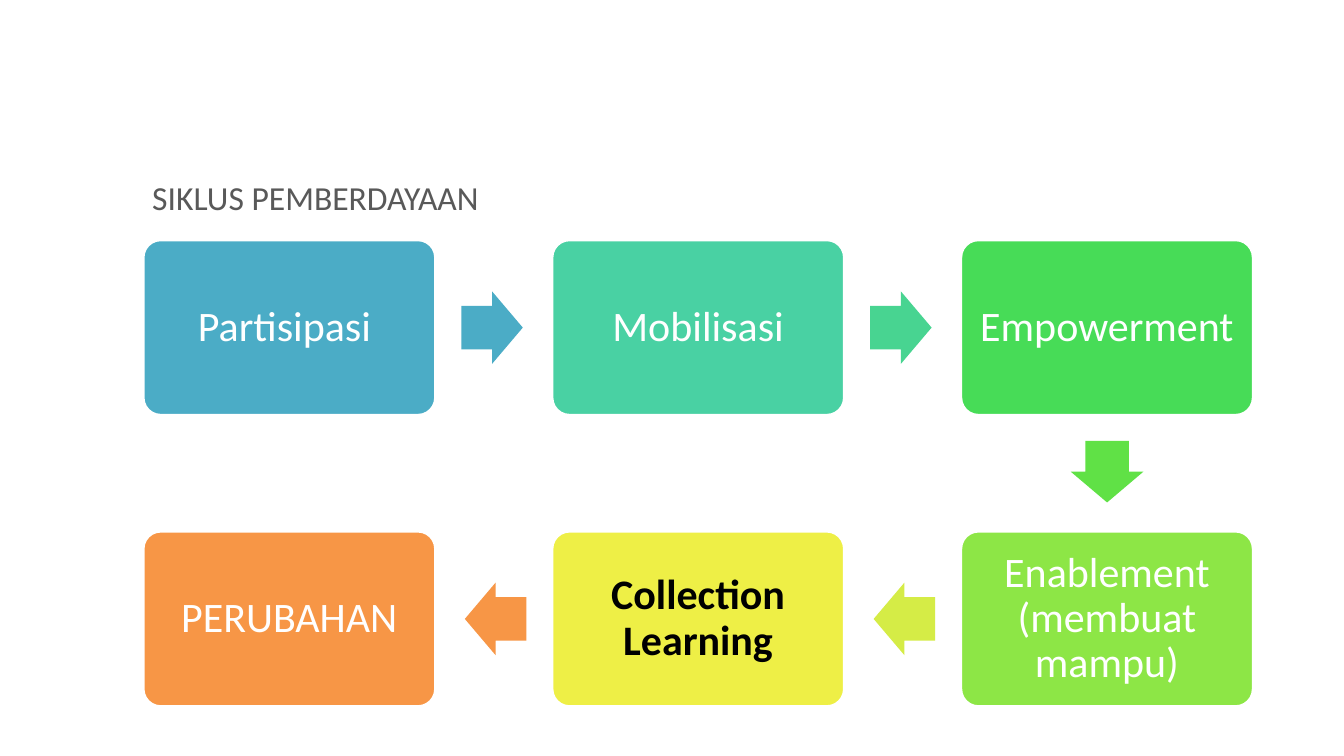
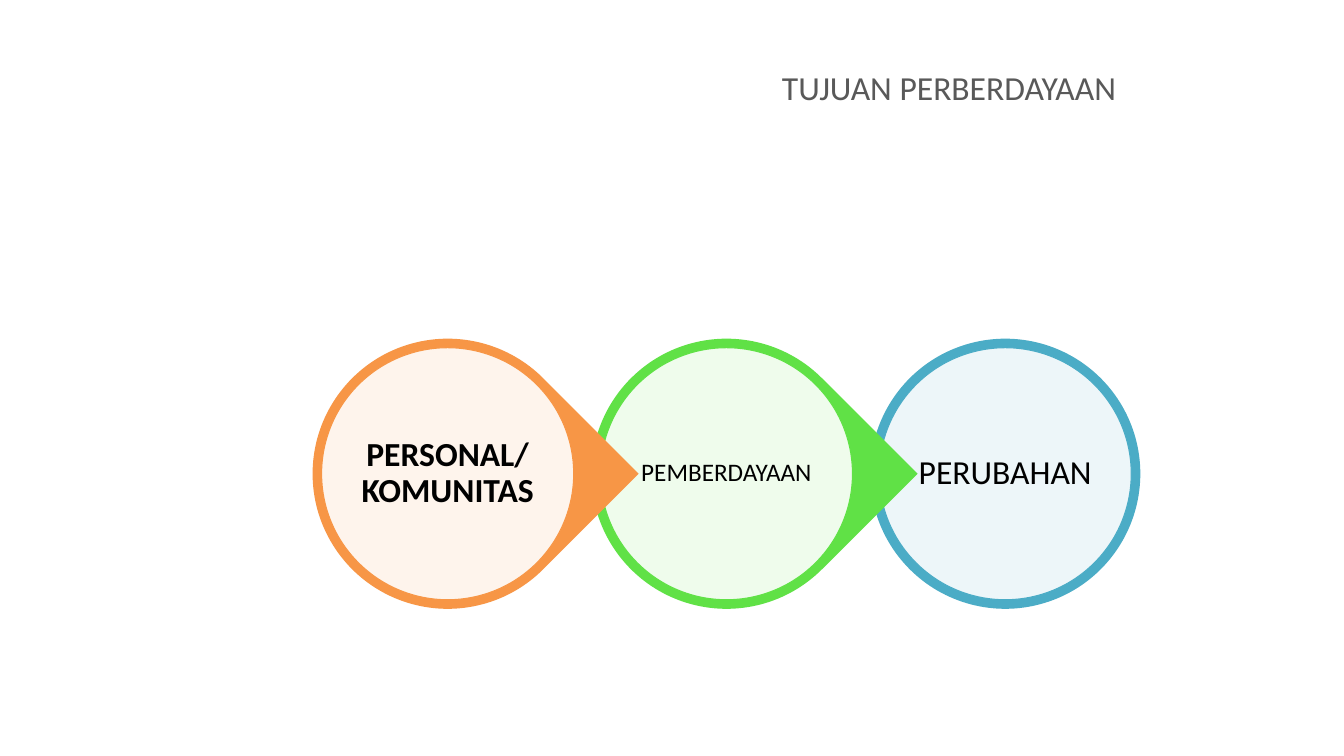
from dataclasses import dataclass
from itertools import zip_longest

from lxml.etree import SubElement
from pptx import Presentation
from pptx.dml.color import RGBColor
from pptx.enum.shapes import MSO_SHAPE
from pptx.enum.text import MSO_ANCHOR, MSO_AUTO_SIZE, PP_ALIGN
from pptx.oxml.ns import qn
from pptx.util import Inches, Pt


@dataclass(frozen=True)
class Theme:
    """Colours, font and type sizes shared by the slides."""
    font: str = "Calibri"
    title: str = "595959"
    white: str = "FFFFFF"
    black: str = "000000"
    blue: str = "4BACC6"
    teal: str = "49D1A3"
    mint: str = "48D491"
    green: str = "47DC57"
    leaf: str = "60E146"
    lime: str = "8DE646"
    citron: str = "D5EC46"
    yellow: str = "EEEF46"
    orange: str = "F79646"
    title_size: int = 24
    step_size: int = 30
    goal_size: int = 24
    small_goal_size: int = 18


@dataclass(frozen=True)
class Box:
    """A rectangle in inches."""
    left: float
    top: float
    width: float
    height: float

    def lengths(self):
        """Return the rectangle as slide lengths."""
        return [Inches(v) for v in (self.left, self.top, self.width, self.height)]

    def inset(self, margin):
        """Return the rectangle shrunk on every side."""
        return Box(self.left + margin, self.top + margin,
                   self.width - 2 * margin, self.height - 2 * margin)


THEME = Theme()

CYCLE_STEPS = [
    ("Partisipasi ", 0, 0, THEME.blue, THEME.white, False),
    ("Mobilisasi", 1, 0, THEME.teal, THEME.white, False),
    ("Empowerment", 2, 0, THEME.green, THEME.white, False),
    ("Enablement (membuat mampu)", 2, 1, THEME.lime, THEME.white, False),
    ("Collection Learning", 1, 1, THEME.yellow, THEME.black, True),
    ("PERUBAHAN", 0, 1, THEME.orange, THEME.white, False),
]
CYCLE_ARROWS = [THEME.blue, THEME.mint, THEME.leaf, THEME.citron, THEME.orange]
ROTATIONS = {(1, 0): 0, (0, 1): 90, (-1, 0): 180}

GOALS = [
    ("PERSONAL/KOMUNITAS", THEME.orange, THEME.goal_size, True),
    ("PEMBERDAYAAN", THEME.leaf, THEME.small_goal_size, False),
    ("PERUBAHAN", THEME.blue, THEME.goal_size, False),
]


def format_text(paragraph, size, colour, align, bold=False):
    """Apply font and alignment to a paragraph."""
    paragraph.alignment = align
    font = paragraph.font
    font.name, font.size, font.bold = THEME.font, Pt(size), bold
    font.color.rgb = RGBColor.from_string(colour)


def add_titled_slide(deck, text, box, align):
    """Add a slide with its title placed in the box."""
    slide = deck.slides.add_slide(deck.slide_layouts[5])
    title = slide.shapes.title
    title.left, title.top, title.width, title.height = box.lengths()
    frame = title.text_frame
    frame.text = text
    frame.auto_size = MSO_AUTO_SIZE.NONE
    frame.vertical_anchor = MSO_ANCHOR.TOP
    format_text(frame.paragraphs[0], THEME.title_size, THEME.title, align)
    return slide


def add_filled(slide, kind, box, fill, line=None, line_width=0.75):
    """Add a flat shape with an optional outline."""
    shape = slide.shapes.add_shape(kind, *box.lengths())
    shape.shadow.inherit = False
    shape.fill.solid()
    shape.fill.fore_color.rgb = RGBColor.from_string(fill)
    if line:
        shape.line.color.rgb = RGBColor.from_string(line)
        shape.line.width = Pt(line_width)
    else:
        shape.line.fill.background()
    return shape


def set_label(shape, text, margin, size, colour, bold):
    """Write a centred label inside a shape."""
    frame = shape.text_frame
    frame.text = text
    frame.word_wrap = True
    frame.vertical_anchor = MSO_ANCHOR.MIDDLE
    frame.margin_left = frame.margin_right = Inches(margin)
    frame.margin_top = frame.margin_bottom = Inches(margin)
    frame.paragraphs[0].line_spacing = 0.9
    format_text(frame.paragraphs[0], size, colour, PP_ALIGN.CENTER, bold)


def add_cycle(slide, box):
    """Draw the steps on a three by two grid, with arrows between them."""
    width, height = 2.9, 1.74
    arrow_width, arrow_height, reach = 0.61, 0.72, 0.56
    column_pitch = (box.width - width) / 2
    row_pitch = box.height - height
    for step, following, arrow_fill in zip_longest(
            CYCLE_STEPS, CYCLE_STEPS[1:], CYCLE_ARROWS):
        text, column, row, fill, colour, bold = step
        left = box.left + column * column_pitch
        top = box.top + row * row_pitch
        card = add_filled(slide, MSO_SHAPE.ROUNDED_RECTANGLE,
                          Box(left, top, width, height), fill, THEME.white, 2)
        card.adjustments[0] = 0.1
        set_label(card, text, 0.12, THEME.step_size, colour, bold)
        if following:
            across, down = following[1] - column, following[2] - row
            centre_x = left + width / 2 + across * (width / 2 + reach)
            centre_y = top + height / 2 + down * (height / 2 + reach)
            arrow = add_filled(
                slide, MSO_SHAPE.RIGHT_ARROW,
                Box(centre_x - arrow_width / 2, centre_y - arrow_height / 2,
                    arrow_width, arrow_height), arrow_fill)
            arrow.adjustments[0] = 0.6
            arrow.rotation = ROTATIONS[across, down]


def add_goals(slide, box):
    """Draw the chain of goals from right to left, each pointing at the next."""
    last = len(GOALS) - 1
    pitch = (box.width - box.height) / last
    for index in range(last, -1, -1):
        text, colour, size, bold = GOALS[index]
        rim = Box(box.left + index * pitch, box.top, box.height, box.height)
        if index == last:
            add_filled(slide, MSO_SHAPE.OVAL, rim, colour)
        else:
            add_filled(slide, MSO_SHAPE.TEAR, rim, colour).rotation = 45
        disc = add_filled(slide, MSO_SHAPE.OVAL, rim.inset(0.09), THEME.white, colour)
        tint = disc._element.spPr.find(qn("a:solidFill"))[0]
        SubElement(tint, qn("a:alpha")).set("val", "90000")
        set_label(disc, text, 0, size, THEME.black, bold)


def main():
    """Build and save the deck."""
    deck = Presentation()
    deck.slide_width, deck.slide_height = Inches(13.33), Inches(7.5)
    cycle = add_titled_slide(deck, "SIKLUS PEMBERDAYAAN",
                             Box(1.41, 1.7, 11.02, 0.47), PP_ALIGN.LEFT)
    add_cycle(cycle, Box(1.42, 2.38, 11.01, 4.63))
    goals = add_titled_slide(deck, "TUJUAN PERBERDAYAAN",
                             Box(5.08, 0.61, 6.09, 0.47), PP_ALIGN.RIGHT)
    add_goals(goals, Box(3.1, 3.36, 8.21, 2.68))
    deck.save("out.pptx")


if __name__ == "__main__":
    main()
